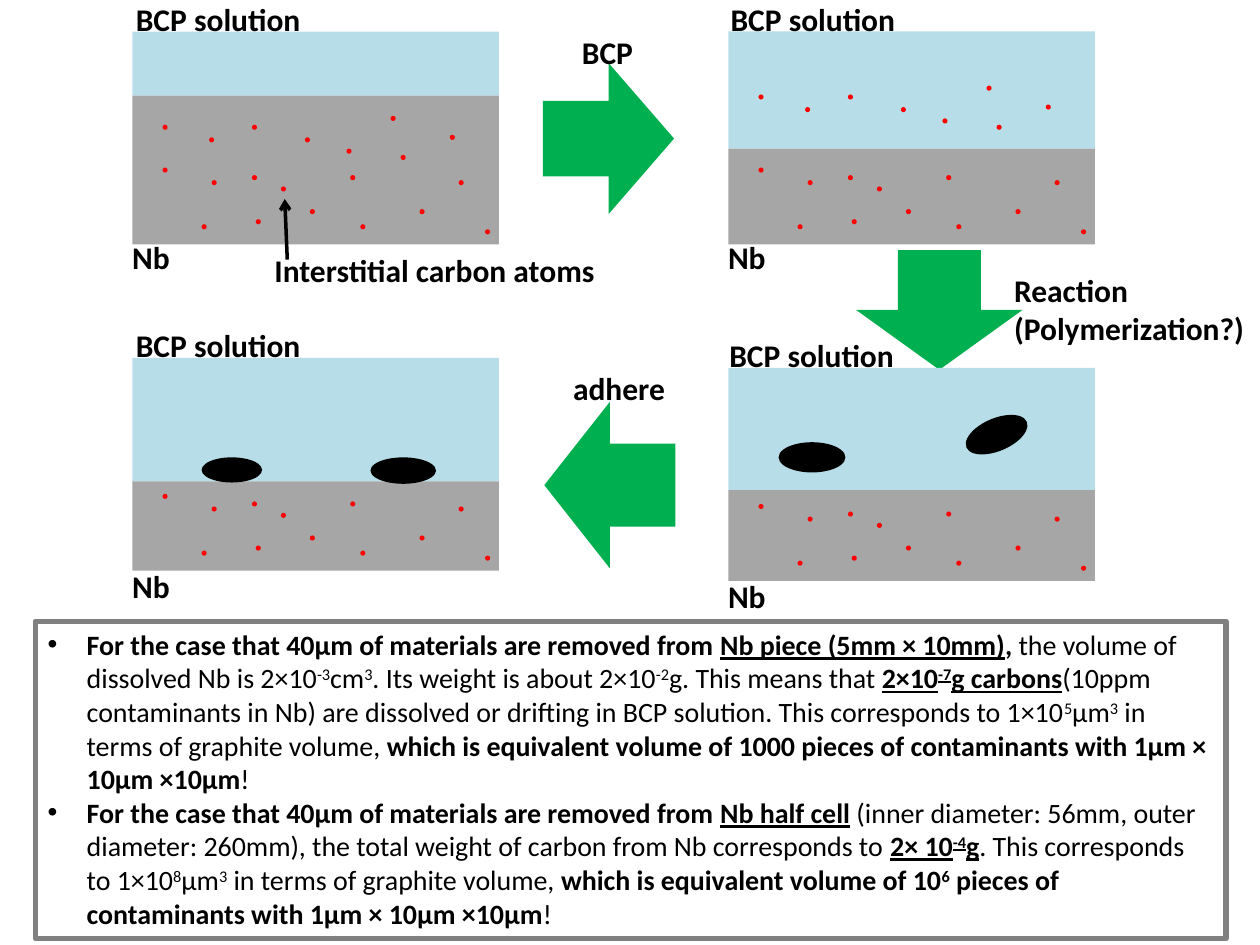
from dataclasses import dataclass
from typing import NamedTuple

from lxml.etree import SubElement
from pptx import Presentation
from pptx.dml.color import RGBColor
from pptx.enum.shapes import MSO_CONNECTOR, MSO_SHAPE as Shape
from pptx.enum.text import MSO_ANCHOR, MSO_AUTO_SIZE as AutoSize, PP_ALIGN
from pptx.oxml.ns import qn
from pptx.util import Inches, Pt

COLS, ROWS = 1000, 750  # fine grid over the slide, square cells
WIDTH, HEIGHT = Inches(10), Inches(7.5)


@dataclass(frozen=True)
class Theme:
    solution: str = "B7DEE8"
    niobium: str = "A6A6A6"
    carbon: str = "FF0000"
    arrow: str = "00B050"
    ink: str = "000000"
    frame: str = "808080"
    font: str = "Calibri"
    label_size: int = 18
    body_size: int = 16


class Box(NamedTuple):
    col: float
    row: float
    cols: float
    rows: float

    def emu(self) -> tuple[int, ...]:
        return (*point(self.col, self.row), *point(self.cols, self.rows))


class Blob(NamedTuple):
    box: Box
    rotation: int = 0


class Panel(NamedTuple):
    col: int
    row: int
    depth: int  # rows of solution above the niobium
    label_shift: int
    nb_row: int
    near_surface: int | None = None  # row shift of the upper atoms, if any


class Arrow(NamedTuple):
    box: Box
    rotation: int
    label: str
    label_box: Box


THEME = Theme()
PANEL_COLS, PANEL_ROWS, ATOM = 291, 169, 4

PANELS = [
    Panel(105, 25, 51, -7, 159, near_surface=0),
    Panel(578, 25, 93, -8, 159, near_surface=-24),
    Panel(578, 292, 97, -9, 161),
    Panel(105, 284, 98, -7, 161),
]
DEEP_ATOMS = [(141, 141), (95, 114), (63, 118), (98, 149), (228, 141), (181, 153),
              (259, 118), (173, 114), (280, 157), (24, 108), (118, 123), (55, 153)]
UPPER_ATOMS = [(252, 82), (205, 67), (170, 93), (95, 74),
               (213, 98), (24, 74), (61, 84), (137, 84)]
BLOBS = [
    Blob(Box(618, 351, 53, 24)),
    Blob(Box(765, 332, 52, 26), 337),
    Blob(Box(160, 363, 48, 20)),
    Blob(Box(294, 363, 52, 21)),
]
ARROWS = [
    Arrow(Box(431, 50, 104, 120), 0, "BCP", Box(452, 21, 61, 40)),
    Arrow(Box(698, 180, 95, 132), 90, "Reaction\n(Polymerization?)",
          Box(795, 210, 204, 71)),
    Arrow(Box(432, 319, 104, 132), 180, "adhere", Box(445, 288, 94, 40)),
]

# Run styles: b bold, u underlined, ^ superscript
CASES = [
    [("For the case that 40μm of materials are removed from ", "b"),
     ("Nb piece (5mm × 10mm)", "bu"), (", ", "b"),
     ("the volume of dissolved Nb is 2×10", ""), ("-3", "^"), ("cm", ""), ("3", "^"),
     (". Its weight is about 2×10", ""), ("-2", "^"), ("g. This means that ", ""),
     ("2×10", "bu"), ("-7", "bu^"), ("g carbons", "bu"),
     ("(10ppm contaminants in Nb) are dissolved or drifting in BCP solution. "
      "This corresponds to 1×10", ""), ("5", "^"), ("μm", ""), ("3", "^"),
     (" in terms of graphite volume, ", ""),
     ("which is equivalent volume of 1000 pieces of contaminants with "
      "1μm × 10μm ×10μm", "b"), ("!", "")],
    [("For the case that 40μm of materials are removed from ", "b"),
     ("Nb half cell", "bu"),
     (" (inner diameter: 56mm, outer diameter: 260mm), the total weight of carbon "
      "from Nb corresponds to ", ""),
     ("2× 10", "bu"), ("-4", "bu^"), ("g", "bu"),
     (". This corresponds to 1×10", ""), ("8", "^"), ("μm", ""), ("3", "^"),
     (" in terms of graphite volume, ", ""),
     ("which is equivalent volume of 10", "b"), ("6", "b^"),
     (" pieces of contaminants with 1μm × 10μm ×10μm", "b"), ("!", "")],
]


def point(col: float, row: float) -> tuple[int, int]:
    return round(WIDTH * col / COLS), round(HEIGHT * row / ROWS)


def rgb(color: str) -> RGBColor:
    return RGBColor.from_string(color)


def style_run(r, size: int, style: str) -> None:
    r.font.name, r.font.size = THEME.font, Pt(size)
    r.font.color.rgb = rgb(THEME.ink)
    r.font.bold, r.font.underline = "b" in style, "u" in style
    if "^" in style:
        r.font._element.set("baseline", "30000")


def add_solid(s, kind: Shape, box: Box, color: str, rotation: int = 0) -> None:
    sp = s.shapes.add_shape(kind, *box.emu())
    sp.shadow.inherit = False
    sp.fill.solid()
    sp.fill.fore_color.rgb = rgb(color)
    sp.line.fill.background()
    sp.rotation = rotation


def add_label(s, text: str, box: Box) -> None:
    tf = s.shapes.add_textbox(*box.emu()).text_frame
    tf.text = text
    tf.word_wrap = False
    tf.auto_size = AutoSize.SHAPE_TO_FIT_TEXT
    for p in tf.paragraphs:
        for r in p.runs:
            style_run(r, THEME.label_size, "b")


def add_panel(s, panel: Panel) -> None:
    col, row, depth = panel.col, panel.row, panel.depth
    add_solid(s, Shape.RECTANGLE, Box(col, row, PANEL_COLS, depth), THEME.solution)
    add_solid(s, Shape.RECTANGLE,
              Box(col, row + depth, PANEL_COLS, PANEL_ROWS - depth), THEME.niobium)
    atoms = list(DEEP_ATOMS)
    if panel.near_surface is not None:
        atoms += [(x, y + panel.near_surface) for x, y in UPPER_ATOMS]
    for x, y in atoms:
        add_solid(s, Shape.OVAL, Box(col + x, row + y, ATOM, ATOM), THEME.carbon)
    add_label(s, "Nb", Box(col - 10, row + panel.nb_row, 50, 40))
    add_label(s, "BCP solution", Box(col + panel.label_shift, row - 30, 152, 40))


def add_pointer(s, start: tuple[int, int], end: tuple[int, int]) -> None:
    line = s.shapes.add_connector(MSO_CONNECTOR.STRAIGHT, *point(*start), *point(*end))
    line.line.color.rgb, line.line.width = rgb(THEME.ink), Pt(2)
    SubElement(line.line._get_or_add_ln(), qn("a:tailEnd"), type="arrow")
    SubElement(line._element.spPr, qn("a:effectLst"))


def add_cases(s, box: Box) -> None:
    """Framed box holding the bulleted estimates."""
    sp = s.shapes.add_shape(Shape.RECTANGLE, *box.emu())
    sp.shadow.inherit = False
    sp.fill.background()
    sp.line.color.rgb, sp.line.width = rgb(THEME.frame), Pt(3)
    tf = sp.text_frame
    tf.word_wrap, tf.vertical_anchor = True, MSO_ANCHOR.TOP
    tf.auto_size = AutoSize.SHAPE_TO_FIT_TEXT
    for i, runs in enumerate(CASES):
        p = tf.add_paragraph() if i else tf.paragraphs[0]
        p.alignment = PP_ALIGN.LEFT
        pPr = p._p.get_or_add_pPr()
        pPr.set("marL", str(Inches(0.31)))
        pPr.set("indent", str(-Inches(0.31)))
        SubElement(pPr, qn("a:buFont"), typeface="Arial")
        SubElement(pPr, qn("a:buChar"), char="•")
        for text, style in runs:
            r = p.add_run()
            r.text = text
            style_run(r, THEME.body_size, style)


def main() -> None:
    prs = Presentation()
    prs.slide_width, prs.slide_height = WIDTH, HEIGHT
    s = prs.slides.add_slide(prs.slide_layouts[6])
    add_cases(s, Box(28, 493, 945, 252))
    for arrow in ARROWS:
        add_solid(s, Shape.RIGHT_ARROW, arrow.box, THEME.arrow, arrow.rotation)
        add_label(s, arrow.label, arrow.label_box)
    for panel in PANELS:
        add_panel(s, panel)
    add_label(s, "Interstitial carbon atoms", Box(208, 194, 276, 40))
    add_pointer(s, (228, 206), (226, 158))
    for blob in BLOBS:
        add_solid(s, Shape.OVAL, blob.box, THEME.ink, blob.rotation)
    prs.save("out.pptx")


if __name__ == "__main__":
    main()
